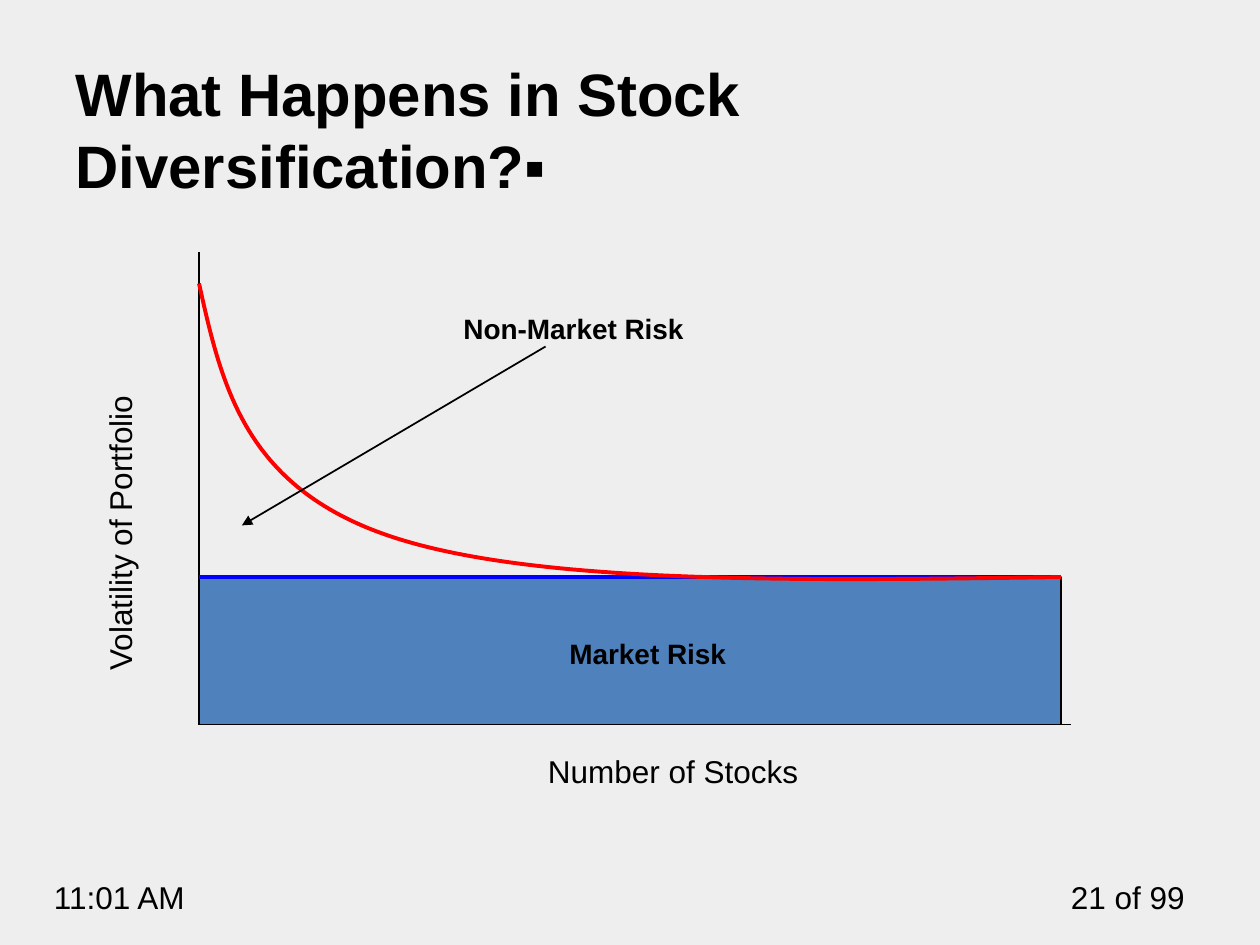
from lxml import etree
from pptx import Presentation
from pptx import util as u
from pptx.dml.color import RGBColor
from pptx.enum import shapes, text
from pptx.oxml.ns import qn

COLORS = {
    "background": "EEEEEE",
    "ink": "000000",
    "market": "4F81BD",
    "floor": "0000FF",
    "curve": "FF0000",
}
FONT = "Arial"
LEFT, RIGHT = 1.58, 8.42
TOP, FLOOR, BASE = 2, 4.58, 5.75


class SlideBuilder:
    def __init__(self, presentation):
        self.slide = presentation.slides.add_slide(presentation.slide_layouts[5])
        fill = self.slide.background.fill
        fill.solid()
        fill.fore_color.rgb = self.color("background")

    def color(self, name):
        return RGBColor.from_string(COLORS[name])

    def add_run(self, paragraph, words, size, bold):
        run = paragraph.add_run()
        run.text = words
        run.font.name = FONT
        run.font.size = u.Pt(size)
        run.font.bold = bold
        run.font.color.rgb = self.color("ink")

    def style_line(self, line, color, width):
        line.color.rgb = self.color(color)
        line.width = u.Pt(width)

    def title(self, words, left, top, width, height):
        shape = self.slide.shapes.title
        shape.left, shape.top = u.Inches(left), u.Inches(top)
        shape.width, shape.height = u.Inches(width), u.Inches(height)
        frame = shape.text_frame
        frame.auto_size = text.MSO_AUTO_SIZE.NONE
        frame.vertical_anchor = text.MSO_ANCHOR.BOTTOM
        paragraph = frame.paragraphs[0]
        paragraph.alignment = text.PP_ALIGN.LEFT
        self.add_run(paragraph, words, 34.2, True)

    def label(self, words, left, top, width, height=0.4, size=18, bold=False,
              align=text.PP_ALIGN.LEFT, rotation=0):
        shape = self.slide.shapes.add_textbox(
            u.Inches(left), u.Inches(top), u.Inches(width), u.Inches(height))
        shape.rotation = rotation
        frame = shape.text_frame
        frame.word_wrap = True
        frame.auto_size = text.MSO_AUTO_SIZE.SHAPE_TO_FIT_TEXT
        paragraph = frame.paragraphs[0]
        paragraph.alignment = align
        self.add_run(paragraph, words, size, bold)

    def rectangle(self, left, top, right, bottom, fill):
        shape = self.slide.shapes.add_shape(
            shapes.MSO_SHAPE.RECTANGLE, u.Inches(left), u.Inches(top),
            u.Inches(right - left), u.Inches(bottom - top))
        shape.shadow.inherit = False
        shape.fill.solid()
        shape.fill.fore_color.rgb = self.color(fill)
        self.style_line(shape.line, "ink", 1)

    def line(self, start, end, color="ink", width=1, arrow=False):
        connector = self.slide.shapes.add_connector(
            shapes.MSO_CONNECTOR.STRAIGHT,
            *(u.Inches(value) for value in (*start, *end)))
        self.style_line(connector.line, color, width)
        if arrow:
            outline = connector.line._get_or_add_ln()
            etree.SubElement(outline, qn("a:tailEnd"), type="triangle")
        etree.SubElement(connector._element.spPr, qn("a:effectLst"))

    def curve(self, start, controls, color, width):
        points = [(u.Inches(x), u.Inches(y)) for x, y in (start, *controls)]
        builder = self.slide.shapes.build_freeform(*points[0])
        builder.add_line_segments(points[1:], close=False)
        shape = builder.convert_to_shape()
        shape.shadow.inherit = False
        shape.fill.background()
        self.style_line(shape.line, color, width)
        segments = list(shape._element.iter(qn("a:lnTo")))
        for index in range(0, len(segments), 3):
            bezier = etree.Element(qn("a:cubicBezTo"))
            segments[index].addprevious(bezier)
            for segment in segments[index:index + 3]:
                bezier.append(segment[0])
                segment.getparent().remove(segment)


def main():
    presentation = Presentation()
    presentation.slide_width = u.Inches(10)
    presentation.slide_height = u.Inches(7.5)
    builder = SlideBuilder(presentation)

    builder.label("21 of 99", 8, 6.92, 1.5, align=text.PP_ALIGN.RIGHT)
    builder.label("11:01 AM", 0.33, 6.92, 1.58)
    builder.title("What Happens in Stock Diversification?▪", 0.5, 0.39, 9, 1.25)

    builder.rectangle(LEFT, FLOOR, RIGHT, BASE, "market")
    builder.line((LEFT, TOP), (LEFT, BASE))
    builder.line((LEFT, BASE), (8.5, BASE))
    builder.label("Number of Stocks", 4.25, 5.92, 3.42)
    builder.label("Volatility of Portfolio", -0.76, 3.51, 3.42, rotation=270)

    builder.line((LEFT, FLOOR), (RIGHT, FLOOR), "floor", 2.25)
    builder.curve(
        (LEFT, 2.25),
        [(1.76, 3.06), (1.94, 3.86), (3.08, 4.25),
         (4.22, 4.64), (6.32, 4.61), (RIGHT, FLOOR)],
        "curve", 2.25)

    builder.label("Market Risk", 4.42, 5, 1.58, 0.37, 16, True)
    builder.label("Non-Market Risk", 3.58, 2.42, 2.83, 0.37, 16, True)
    builder.line((4.33, 2.75), (1.92, 4.17), arrow=True)

    presentation.save("out.pptx")


if __name__ == "__main__":
    main()
